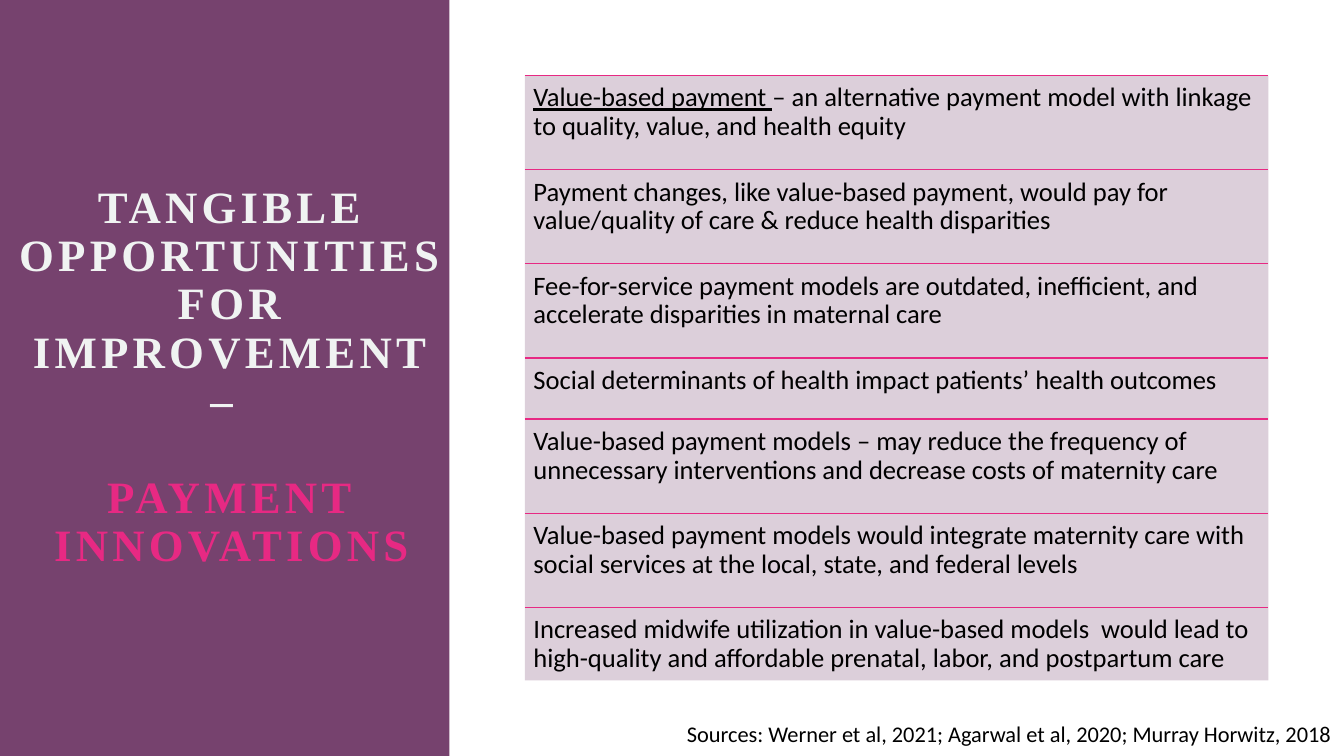
from copy import deepcopy
from lxml import etree
from pptx import Presentation
from pptx import util as u
from pptx.dml.color import RGBColor
from pptx.enum import shapes, text
from pptx.oxml import ns

PX = 7620  # 120 px to the inch
COLOURS = {"plum": "76426E", "pink": "E72983", "pale": "F0F3F2", "black": "000000"}
ROW_LEFT, ROW_TOP, ROW_WIDTH = 625, 90, 885
ROW_TALL, ROW_SHORT = 112, 73
ROWS = [
    (ROW_TALL, ["Value-based payment ",
                "– an alternative payment model with linkage to quality, value, and health equity"]),
    (ROW_TALL, ["Payment changes, like value-based payment, would pay for value/quality of care "
                "& reduce health disparities"]),
    (ROW_TALL, ["Fee-for-service payment models are outdated, inefficient, and accelerate "
                "disparities in maternal care"]),
    (ROW_SHORT, ["Social determinants of health impact patients’ health outcomes"]),
    (ROW_TALL, ["Value-based payment models – may reduce the frequency of unnecessary "
                "interventions and decrease costs of maternity care"]),
    (ROW_TALL, ["Value-based payment models would integrate maternity care with social services "
                "at the local, state, and federal levels"]),
    (ROW_TALL, ["Increased midwife utilization in value-based models  would lead to high-quality "
                "and affordable prenatal, labor, and postpartum care"]),
]


def colour(name):
    return RGBColor.from_string(COLOURS[name])


def add_text(left, top, width, height, pieces, size):
    box = page.shapes.add_textbox(left * PX, top * PX, width * PX, height * PX)
    box.text_frame.word_wrap = True
    para = box.text_frame.paragraphs[0]
    for piece in pieces:
        span = para.add_run()
        span.text = piece
        span.font.size = u.Pt(size)
        span.font.name = "Calibri"
        span.font.color.rgb = colour("black")
    return box


deck = Presentation()
deck.slide_width, deck.slide_height = 1600 * PX, 900 * PX
page = deck.slides.add_slide(deck.slide_layouts[5])

# Plum side panel and tinted list panel
panels = []
for left, top, width, height in [(0, 0, 535, 900), (ROW_LEFT, ROW_TOP, ROW_WIDTH, 720)]:
    panel = page.shapes.add_shape(shapes.MSO_SHAPE.RECTANGLE,
                                  left * PX, top * PX, width * PX, height * PX)
    panel.shadow.inherit = False
    panel.fill.solid()
    panel.fill.fore_color.rgb = colour("plum")
    panel.line.fill.background()
    panels.append(panel)
tint = panels[1].fill._xPr.find(".//" + ns.qn("a:srgbClr"))
etree.SubElement(tint, ns.qn("a:alpha"), val="25000")

# Title, in front of the side panel
title = page.shapes.title
title.left, title.top, title.width, title.height = 8 * PX, 180 * PX, 535 * PX, 540 * PX
panels[0]._element.addnext(title._element)
frame = title.text_frame
frame.text = "TANGIBLE\vOPPORTUNITIES\vFOR IMPROVEMENT – \v\vPAYMENT\vINNOVATIONS"
frame.word_wrap = True
frame.auto_size = text.MSO_AUTO_SIZE.NONE
frame.vertical_anchor = text.MSO_ANCHOR.MIDDLE
para = frame.paragraphs[0]
para.alignment = text.PP_ALIGN.CENTER
para.line_spacing = 0.9
for index, span in enumerate(para.runs):
    span.font.size = u.Pt(32)
    span.font.name = "Times New Roman"
    span.font.bold = True
    span.font.color.rgb = colour("pale" if index < 3 else "pink")
    span.font._element.set("spc", "300")
for line_break in para._p.findall(ns.qn("a:br")):
    line_break.append(deepcopy(para.runs[0].font._element))

# Ruled list of payment points
top = ROW_TOP
for height, pieces in ROWS:
    rule = page.shapes.add_connector(shapes.MSO_CONNECTOR.STRAIGHT, ROW_LEFT * PX, top * PX,
                                     (ROW_LEFT + ROW_WIDTH) * PX, top * PX)
    rule.line.color.rgb = colour("pink")
    rule.line.width = u.Pt(1)
    etree.SubElement(rule._element.spPr, ns.qn("a:effectLst"))
    row = add_text(ROW_LEFT, top, ROW_WIDTH, height, pieces, 19)
    frame = row.text_frame
    frame.margin_left = frame.margin_right = frame.margin_top = frame.margin_bottom = 10 * PX
    frame.paragraphs[0].line_spacing = 0.9
    if len(pieces) > 1:
        frame.paragraphs[0].runs[0].font.underline = True
    top += height

add_text(806, 851, 798, 44,
         ["Sources: Werner et al, 2021; Agarwal et al, 2020; Murray Horwitz, 2018"], 16)

deck.save("out.pptx")
